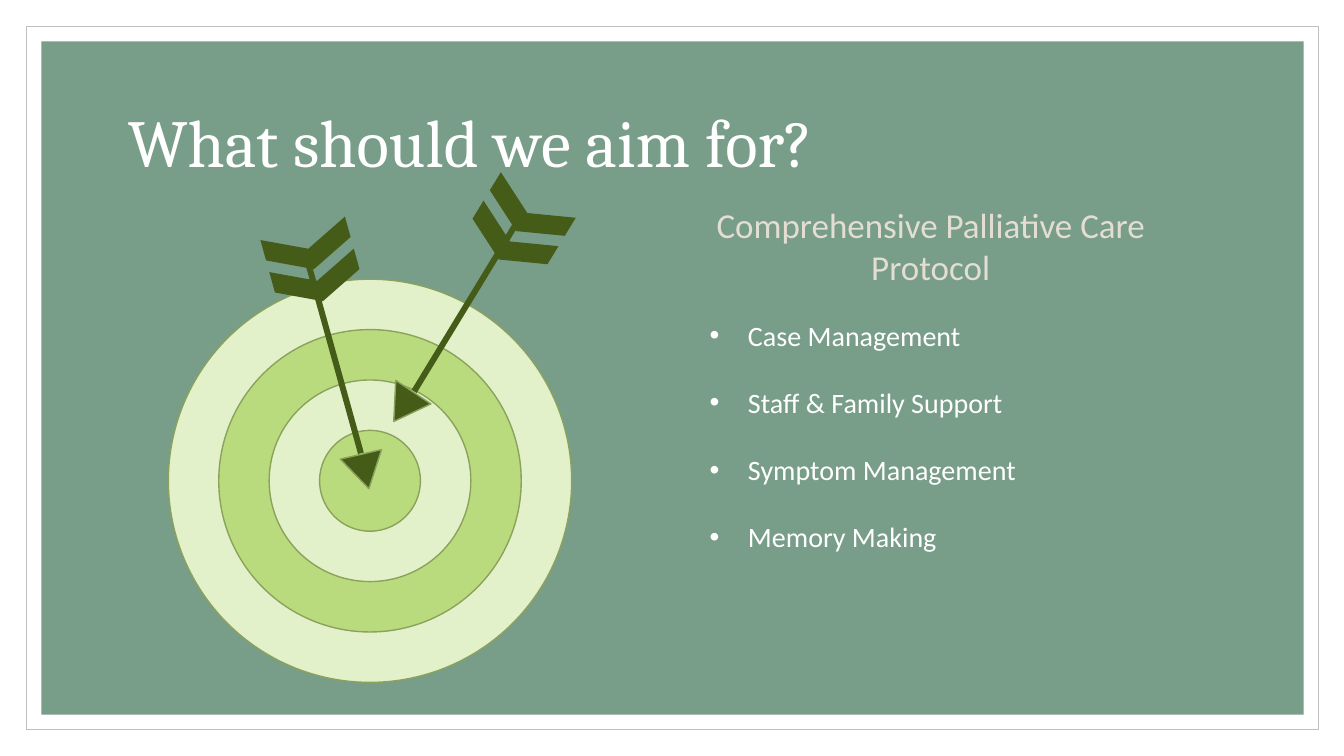
from math import cos, radians, sin

from lxml.etree import SubElement
from pptx import Presentation
from pptx.dml.color import RGBColor
from pptx.enum.shapes import MSO_SHAPE
from pptx.enum.text import MSO_ANCHOR, PP_ALIGN
from pptx.oxml.ns import qn
from pptx.util import Inches, Pt

COLORS = {
    "white": "FFFFFF",
    "frame": "BFBFBF",
    "sage": "789D89",
    "pale": "E3F1CB",
    "lime": "BADB7D",
    "outline": "8AA25C",
    "arrow": "455C19",
    "sand": "E3DED1",
}
HEADING_FONT, BODY_FONT = "Cambria", "Calibri"


class SlideBuilder:
    def __init__(self, slide):
        self.slide = slide

    def shape(self, kind, center, size, fill, line=None, line_width=1, angle=0, group=None):
        """Add a preset shape around its center, to the slide or to a group."""
        (x, y), (width, height) = center, size
        shapes = (group or self.slide).shapes
        item = shapes.add_shape(kind, Inches(x - width / 2), Inches(y - height / 2),
                                Inches(width), Inches(height))
        item.shadow.inherit = False
        item.rotation = angle
        item.fill.solid()
        item.fill.fore_color.rgb = RGBColor.from_string(COLORS[fill])
        if line:
            item.line.color.rgb = RGBColor.from_string(COLORS[line])
            item.line.width = Pt(line_width)
        else:
            item.line.fill.background()

    def text_frame(self, left, top, width, height, anchor=MSO_ANCHOR.TOP):
        box = self.slide.shapes.add_textbox(Inches(left), Inches(top), Inches(width), Inches(height))
        frame = box.text_frame
        frame.word_wrap = True
        frame.vertical_anchor = anchor
        return frame

    def run(self, paragraph, words, size, color, font):
        run = paragraph.add_run()
        run.text = words
        run.font.size = Pt(size)
        run.font.name = font
        run.font.color.rgb = RGBColor.from_string(COLORS[color])

    def bullet(self, frame, words, space_before):
        paragraph = frame.add_paragraph()
        paragraph.space_before = Pt(space_before)
        properties = paragraph._p.get_or_add_pPr()
        properties.set("marL", str(Inches(0.38)))
        properties.set("indent", str(-Inches(0.38)))
        SubElement(properties, qn("a:buFont")).set("typeface", "Arial")
        SubElement(properties, qn("a:buChar")).set("char", "•")
        self.run(paragraph, words, 20, "white", BODY_FONT)

    def target(self, center):
        rings = self.slide.shapes.add_group_shape()
        for diameter, fill in zip((4, 3, 2, 1), ("pale", "lime") * 2):
            self.shape(MSO_SHAPE.OVAL, center, (diameter, diameter), fill, "outline", group=rings)

    def arrow(self, center, angle):
        """Add feathers, shaft and head, placed along the direction of flight."""
        arrow = self.slide.shapes.add_group_shape()
        along_x, along_y = cos(radians(angle)), sin(radians(angle))

        def place(kind, along, across, size, line=None, turn=0):
            spot = (center[0] + along * along_x - across * along_y,
                    center[1] + along * along_y + across * along_x)
            self.shape(kind, spot, size, "arrow", line, angle=angle + turn, group=arrow)

        for along in (-1.05, -0.72):
            place(MSO_SHAPE.CHEVRON, along, -0.04, (0.42, 0.87))
        place(MSO_SHAPE.RECTANGLE, 0, 0, (2.09, 0.06))
        place(MSO_SHAPE.ISOSCELES_TRIANGLE, 1.23, 0.01, (0.42, 0.35), "outline", 92.5)


def main():
    deck = Presentation()
    deck.slide_width, deck.slide_height = Inches(13.33), Inches(7.5)
    builder = SlideBuilder(deck.slides.add_slide(deck.slide_layouts[6]))

    # Frame and background panel
    middle = (6.67, 3.75)
    builder.shape(MSO_SHAPE.RECTANGLE, middle, (12.82, 6.98), "white", "frame", 0.5)
    builder.shape(MSO_SHAPE.RECTANGLE, middle, (12.52, 6.68), "sage")

    # Title
    title = builder.text_frame(1.17, 0.7, 11, 1.5, MSO_ANCHOR.MIDDLE).paragraphs[0]
    title.line_spacing = 0.9
    builder.run(title, "What should we aim for?", 48, "white", HEADING_FONT)

    # Target with two arrows
    builder.target((3.67, 4.77))
    builder.arrow((4.65, 2.99), 121.3)
    builder.arrow((3.3, 3.49), 74.5)

    # Protocol list
    protocol = builder.text_frame(6.94, 1.97, 4.58, 3.6)
    heading = protocol.paragraphs[0]
    heading.alignment = PP_ALIGN.CENTER
    builder.run(heading, "Comprehensive Palliative Care Protocol", 25, "sand", BODY_FONT)
    goals = ("Case Management", "Staff & Family Support", "Symptom Management", "Memory Making")
    for index, goal in enumerate(goals):
        builder.bullet(protocol, goal, 24 if index else 22)

    deck.save("out.pptx")


if __name__ == "__main__":
    main()
